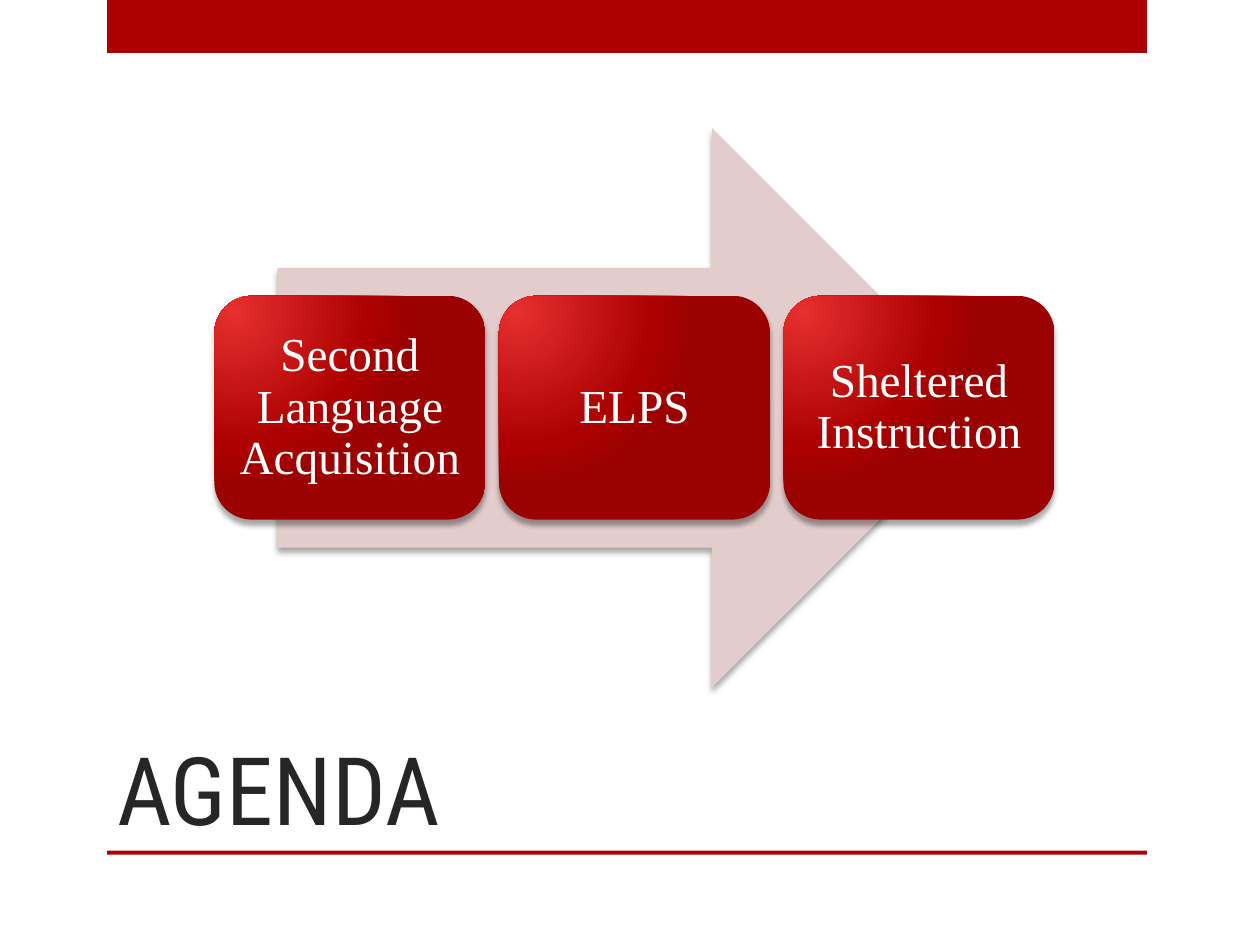
from lxml import etree
from pptx import Presentation
from pptx.dml.color import RGBColor
from pptx.enum import shapes, text
from pptx.oxml import parse_xml
from pptx.oxml.ns import nsdecls
from pptx.util import Cm, Pt

RED = "AD0101"
TOPICS = ["Second Language Acquisition", "ELPS", "Sheltered Instruction"]
GLOW_STOPS = [(0, "E62F2F"), (76, RED), (100, "9C0101")]


def colour(hex_string):
    return RGBColor.from_string(hex_string)


def add_block(slide, preset, left, top, width, height, fill=RED):
    block = slide.shapes.add_shape(preset, Cm(left), Cm(top), Cm(width), Cm(height))
    block.shadow.inherit = False
    block.fill.solid()
    block.fill.fore_color.rgb = colour(fill)
    block.line.fill.background()
    return block


def write(frame, words, font, size, hex_string):
    frame.word_wrap = True
    paragraph = frame.paragraphs[0]
    paragraph.text = words
    run_font = paragraph.runs[0].font
    run_font.name = font
    run_font.size = Pt(size)
    run_font.color.rgb = colour(hex_string)
    return paragraph


def drop_shadow(block):
    """Fill the shape's empty effect list with a soft shadow straight below."""
    effects = block._element.spPr.find("{*}effectLst")
    effects.append(parse_xml(
        f'<a:outerShdw {nsdecls("a")} blurRad="{Pt(3)}" dist="{Pt(3)}" '
        'dir="5400000" rotWithShape="0"><a:srgbClr val="000000">'
        '<a:alpha val="35000"/></a:srgbClr></a:outerShdw>'))


def glow(block):
    """Swap the solid fill for a radial gradient lit from the upper left."""
    stops = "".join(f'<a:gs pos="{position * 1000}"><a:srgbClr val="{shade}"/></a:gs>'
                    for position, shade in GLOW_STOPS)
    gradient = parse_xml(
        f'<a:gradFill {nsdecls("a")} rotWithShape="1"><a:gsLst>{stops}</a:gsLst>'
        '<a:path path="circle"><a:fillToRect l="15000" t="15000" '
        'r="100000" b="100000"/></a:path></a:gradFill>')
    properties = block._element.spPr
    properties.replace(properties.find("{*}solidFill"), gradient)


def add_frame(slide, left, width):
    rectangle = shapes.MSO_SHAPE.RECTANGLE
    add_block(slide, rectangle, left, 0, width, 1.07)
    add_block(slide, rectangle, left, 17.15, width, 0.08)


def add_title(slide, left, top, width, height):
    title = slide.shapes.add_textbox(Cm(left), Cm(top), Cm(width), Cm(height))
    title.text_frame.vertical_anchor = text.MSO_ANCHOR.BOTTOM
    write(title.text_frame, "AGENDA", "Roboto Condensed", 54, "262626")


def add_topic(slide, topic, left, top, width, height):
    card = add_block(slide, shapes.MSO_SHAPE.ROUNDED_RECTANGLE, left, top, width, height)
    glow(card)
    drop_shadow(card)
    frame = card.text_frame
    frame.margin_left = frame.margin_right = Cm(0.25)
    frame.vertical_anchor = text.MSO_ANCHOR.MIDDLE
    paragraph = write(frame, topic, "Times New Roman", 27, "FFFFFF")
    paragraph.alignment = text.PP_ALIGN.CENTER
    paragraph.line_spacing = 0.9


def add_process(slide, left, top, width, height):
    """Place equal topic cards in a row, centred over a wide arrow."""
    arrow_width = width * 0.85
    arrow = add_block(slide, shapes.MSO_SHAPE.RIGHT_ARROW,
                      left + (width - arrow_width) / 2, top,
                      arrow_width, height, "E3CCCC")
    drop_shadow(arrow)

    gap = 0.27
    card_width = (width - gap * (len(TOPICS) - 1)) / len(TOPICS)
    card_height = height * 0.4
    card_top = top + (height - card_height) / 2
    for index, topic in enumerate(TOPICS):
        add_topic(slide, topic, left + index * (card_width + gap), card_top,
                  card_width, card_height)


def main():
    deck = Presentation()
    deck.slide_width, deck.slide_height = Cm(25.4), Cm(19.05)
    slide = deck.slides.add_slide(deck.slide_layouts[6])
    add_frame(slide, 2.16, 20.96)
    add_title(slide, 2.11, 12.7, 18.85, 4.45)
    add_process(slide, 4.32, 2.58, 16.94, 11.28)
    deck.save("out.pptx")


if __name__ == "__main__":
    main()
